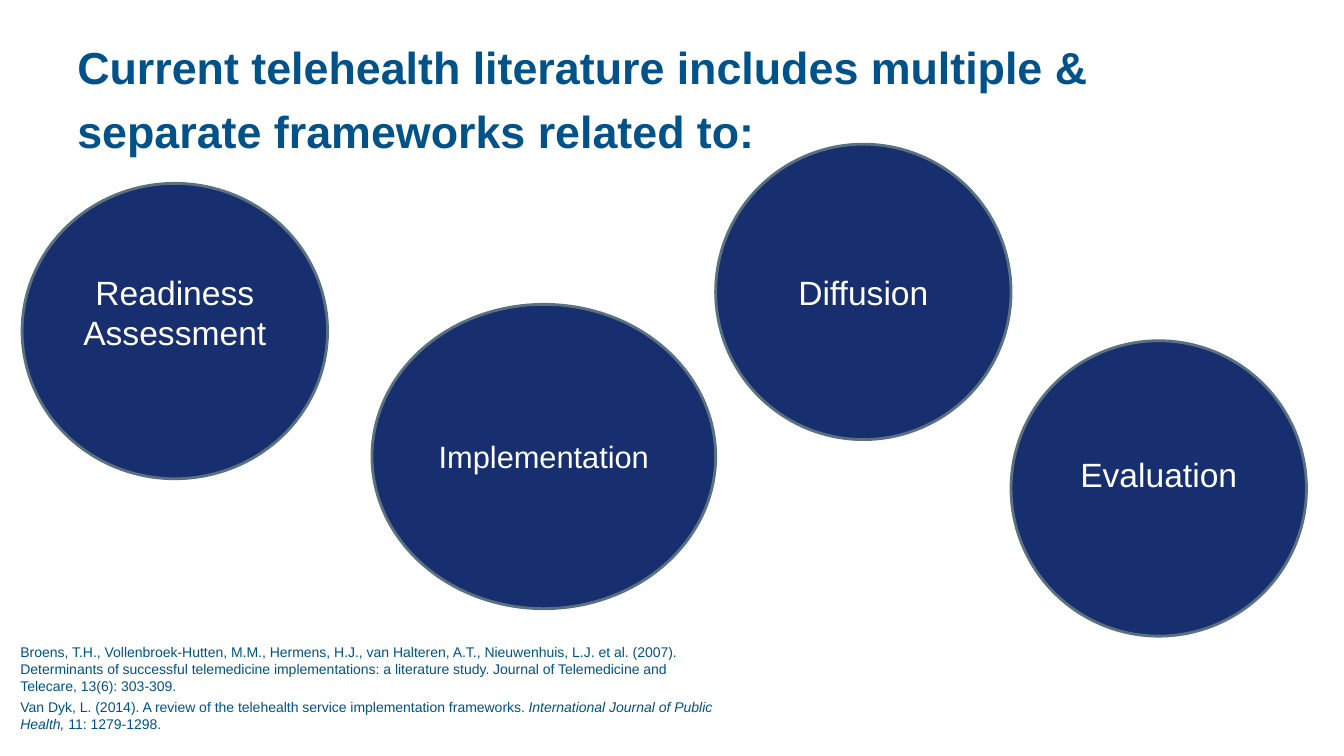
from pptx import Presentation
from pptx.dml.color import RGBColor
from pptx.enum.shapes import MSO_SHAPE as Preset
from pptx.enum.text import MSO_ANCHOR as Anchor, MSO_AUTO_SIZE as AutoSize, PP_ALIGN as Align
from pptx.util import Pt

COLORS = {"heading": "005288", "circle": "172E6F", "outline": "5A717F", "label": "FFFFFF"}
INSETS = {"margin_left": 9.6, "margin_right": 9.6, "margin_top": 4.8, "margin_bottom": 4.8}

HEADING = "Current telehealth literature includes multiple & separate frameworks related to:"
FRAMEWORKS = [
    ("Readiness Assessment", (15.8, 131, 218.2, 211), 24, 27.6),
    ("Implementation", (265.7, 217.4, 245.5, 217.4), 22, 0),
    ("Diffusion", (511.2, 103, 211, 211), 24, 0),
    ("Evaluation", (722.2, 243.4, 211, 211), 24, 20.7),
]
REFERENCES = [
    [("Broens, T.H., Vollenbroek-Hutten, M.M., Hermens, H.J., van Halteren, A.T., "
      "Nieuwenhuis, L.J. et al. (2007). Determinants of successful telemedicine "
      "implementations: a literature study. Journal of Telemedicine and Telecare, "
      "13(6): 303-309.", False)],
    [("Van Dyk, L. (2014). A review of the telehealth service implementation frameworks. ", False),
     ("International Journal of Public Health, ", True),
     ("11: 1279-1298.", False)],
]


def rgb(name):
    return RGBColor.from_string(COLORS[name])


def add_run(paragraph, text, color, **formats):
    run = paragraph.add_run()
    run.text = text
    run.font.color.rgb = rgb(color)
    for key, value in {"name": "Arial", **formats}.items():
        setattr(run.font, key, value)


def set_frame(frame, anchor, insets):
    frame.word_wrap = True
    frame.auto_size = AutoSize.NONE
    frame.vertical_anchor = anchor
    for key, value in insets.items():
        setattr(frame, key, Pt(value))


def add_heading(slide):
    heading = slide.shapes.title
    bounds = {"left": 48, "top": 21.6, "width": 864, "height": 90}
    for key, value in bounds.items():
        setattr(heading, key, Pt(value))
    set_frame(heading.text_frame, Anchor.MIDDLE, {})
    paragraph = heading.text_frame.paragraphs[0]
    paragraph.alignment = Align.LEFT
    paragraph.line_spacing = 1.2
    add_run(paragraph, HEADING, "heading", size=Pt(32), bold=True)


def add_framework(slide, label, bounds, size, lift):
    circle = slide.shapes.add_shape(Preset.OVAL, *map(Pt, bounds))
    circle.shadow.inherit = False
    circle.fill.solid()
    circle.fill.fore_color.rgb = rgb("circle")
    circle.line.color.rgb = rgb("outline")
    circle.line.width = Pt(2)
    insets = {**INSETS, "margin_bottom": INSETS["margin_bottom"] + lift}
    set_frame(circle.text_frame, Anchor.MIDDLE, insets)
    paragraph = circle.text_frame.paragraphs[0]
    paragraph.alignment = Align.CENTER
    add_run(paragraph, label, "label", size=Pt(size))


def add_references(slide):
    box = slide.shapes.add_textbox(Pt(5), Pt(455), Pt(520.6), Pt(74.2))
    frame = box.text_frame
    set_frame(frame, Anchor.TOP, INSETS)
    for index, reference in enumerate(REFERENCES):
        paragraph = frame.add_paragraph() if index else frame.paragraphs[0]
        paragraph.space_before = Pt(3 if index else 0)
        for text, italic in reference:
            add_run(paragraph, text, "heading", size=Pt(10), italic=italic)


def main():
    deck = Presentation()
    deck.slide_width, deck.slide_height = Pt(960), Pt(540)
    slide = deck.slides.add_slide(deck.slide_layouts.get_by_name("Title Only"))
    add_heading(slide)
    for framework in FRAMEWORKS:
        add_framework(slide, *framework)
    add_references(slide)
    deck.save("out.pptx")


if __name__ == "__main__":
    main()
